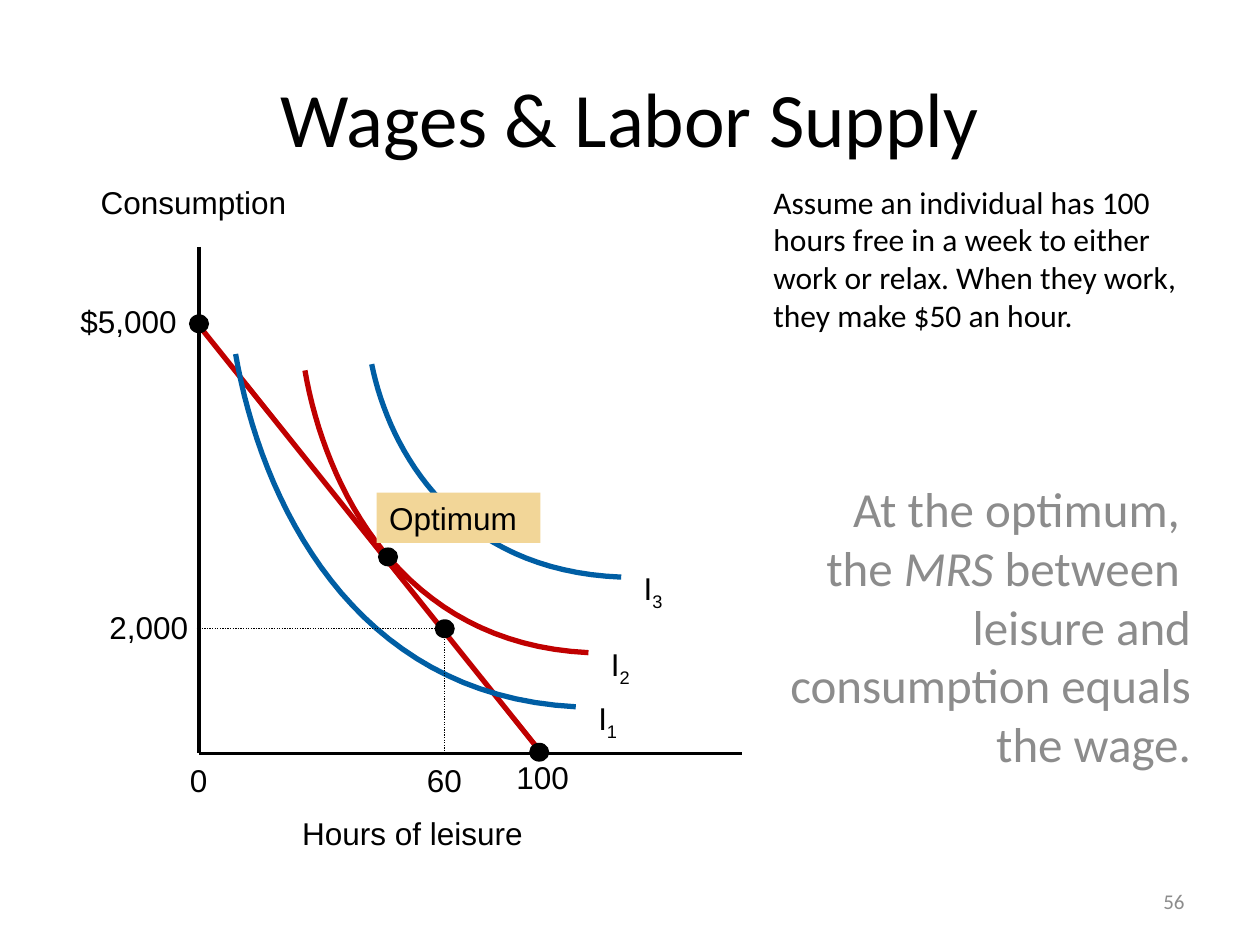
from lxml import etree
from pptx import Presentation
from pptx import util as u
from pptx.dml import color
from pptx.enum import dml, shapes, text
from pptx.oxml import ns

Inches, Pt = u.Inches, u.Pt
ALIGN, ANCHOR = text.PP_ALIGN, text.MSO_ANCHOR
COLORS = {
    "ink": "000000",
    "muted": "8C8C8C",
    "red": "C00000",
    "blue": "005EA4",
    "highlight": "F2D698",
}


def rgb(name):
    return color.RGBColor.from_string(COLORS[name])


def add_run(paragraph, wording, size, font, ink="ink", italic=False, subscript=False):
    run = paragraph.add_run()
    run.text = wording
    run.font.size = Pt(size)
    run.font.name = font
    run.font.italic = italic
    run.font.color.rgb = rgb(ink)
    if subscript:
        run.font._element.set("baseline", "-25000")


def add_textbox(slide, box, align=ALIGN.LEFT, anchor=ANCHOR.TOP, wrap=True):
    frame = slide.shapes.add_textbox(*map(Inches, box)).text_frame
    frame.word_wrap = wrap
    frame.vertical_anchor = anchor
    frame.paragraphs[0].alignment = align
    return frame.paragraphs[0]


def add_title(slide, box):
    title = add_textbox(slide, box, ALIGN.CENTER, ANCHOR.MIDDLE)
    add_run(title, "Wages & Labor Supply", 44, "Calibri")


def add_assumption(slide, box):
    assumption = add_textbox(slide, box)
    add_run(
        assumption,
        "Assume an individual has 100 hours free in a week to either "
        "work or relax. When they work, they make $50 an hour.",
        18,
        "Calibri",
    )


def add_conclusion(slide, box):
    conclusion = add_textbox(slide, box, ALIGN.RIGHT, ANCHOR.MIDDLE)
    add_run(conclusion, "At the optimum, ", 28, "Calibri", "muted")
    conclusion.add_line_break()
    add_run(conclusion, "the ", 28, "Calibri", "muted")
    add_run(conclusion, "MRS", 28, "Calibri", "muted", italic=True)
    add_run(conclusion, " between ", 28, "Calibri", "muted")
    conclusion.add_line_break()
    add_run(conclusion, "leisure and consumption equals the wage.", 28, "Calibri", "muted")


def add_page_number(slide, box):
    number = add_textbox(slide, box, ALIGN.RIGHT, ANCHOR.MIDDLE)
    add_run(number, "56", 12, "Calibri", "muted")


def add_line(slide, start, end, ink, width, dotted=False):
    line = slide.shapes.add_connector(
        shapes.MSO_CONNECTOR.STRAIGHT, *map(Inches, start + end)
    )
    line.line.color.rgb = rgb(ink)
    line.line.width = Pt(width)
    if dotted:
        line.line.dash_style = dml.MSO_LINE.ROUND_DOT
    etree.SubElement(line._element.spPr, ns.qn("a:effectLst"))


def bezier(controls, steps=32):
    weights = (1, 3, 3, 1)
    return [
        tuple(
            sum(
                w * (1 - t) ** (3 - k) * t**k * point[axis]
                for k, (w, point) in enumerate(zip(weights, controls))
            )
            for axis in (0, 1)
        )
        for t in (step / steps for step in range(steps + 1))
    ]


def add_curve(slide, controls, ink):
    points = [(Inches(x), Inches(y)) for x, y in bezier(controls)]
    builder = slide.shapes.build_freeform(*points[0])
    builder.add_line_segments(points[1:], close=False)
    curve = builder.convert_to_shape()
    curve.shadow.inherit = False
    curve.fill.background()
    curve.line.color.rgb = rgb(ink)
    curve.line.width = Pt(3)


def add_filled(slide, kind, box, fill):
    shape = slide.shapes.add_shape(kind, *map(Inches, box))
    shape.shadow.inherit = False
    shape.fill.solid()
    shape.fill.fore_color.rgb = rgb(fill)
    shape.line.fill.background()
    return shape


def add_graph(slide, box):
    left, top, width, height = box

    def at(x, y):
        return left + x, top + y

    add_line(slide, at(0, 0), at(0, height), "ink", 2.25)
    add_line(slide, at(0, height), at(width, height), "ink", 2.25)
    add_line(slide, at(-0.02, 0.6), at(2.72, height), "red", 3)

    indifference_curves = [
        ("2", "red", [(0.84, 0.98), (1, 1.9), (1.6, 3.15), (3.09, 3.22)]),
        ("1", "blue", [(0.29, 0.85), (0.49, 2), (1.21, 3.56), (2.99, 3.65)]),
        ("3", "blue", [(1.37, 0.93), (1.51, 1.62), (2.04, 2.57), (3.35, 2.62)]),
    ]
    for level, ink, controls in indifference_curves:
        add_curve(slide, [at(*point) for point in controls], ink)
        end_x, end_y = controls[-1]
        name = add_textbox(slide, (*at(end_x + 0.08, end_y - 0.11), 0.36, 0.4), wrap=False)
        add_run(name, "I", 18, "Arial")
        add_run(name, level, 18, "Arial", subscript=True)

    add_line(slide, at(1.95, 3.03), at(1.95, height), "ink", 0.75, dotted=True)
    add_line(slide, at(-0.02, 3.03), at(1.93, 3.03), "ink", 0.75, dotted=True)

    dot_width, dot_height = 0.16, 0.15
    for x, y in [(0, 0.61), (2.7, 4.01), (1.5, 2.46), (1.95, 3.03)]:
        corner = at(x - dot_width / 2, y - dot_height / 2)
        add_filled(slide, shapes.MSO_SHAPE.OVAL, (*corner, dot_width, dot_height), "ink")

    optimum = add_filled(
        slide, shapes.MSO_SHAPE.RECTANGLE, (*at(1.41, 1.95), 1.3, 0.4), "highlight"
    ).text_frame
    optimum.word_wrap = False
    optimum.vertical_anchor = ANCHOR.TOP
    optimum.paragraphs[0].alignment = ALIGN.LEFT
    add_run(optimum.paragraphs[0], "Optimum", 18, "Arial")

    labels = [
        ("Consumption", -0.9, -0.56, 1.69, ALIGN.RIGHT),
        ("Hours of leisure", 0.72, 4.45, 1.97, ALIGN.LEFT),
        ("0", -0.17, 4.03, 0.34, ALIGN.LEFT),
        ("60", 1.71, 4.03, 0.48, ALIGN.LEFT),
        ("100", 2.42, 4.01, 0.62, ALIGN.LEFT),
        ("$5,000", -1.04, 0.39, 1.03, ALIGN.LEFT),
        ("2,000", -0.81, 2.82, 0.83, ALIGN.LEFT),
    ]
    for wording, x, y, label_width, align in labels:
        label = add_textbox(slide, (*at(x, y), label_width, 0.4), align, wrap=False)
        add_run(label, wording, 18, "Arial")


def main():
    deck = Presentation()
    deck.slide_width, deck.slide_height = Inches(10), Inches(7.5)
    slide = deck.slides.add_slide(deck.slide_layouts[6])
    add_title(slide, (0.5, 0.3, 9, 1.25))
    add_conclusion(slide, (6.09, 3.48, 3.46, 2.97))
    add_graph(slide, (1.58, 1.96, 4.31, 4.02))
    add_page_number(slide, (7.17, 6.95, 2.33, 0.4))
    add_assumption(slide, (6.04, 1.4, 3.53, 1.31))
    deck.save("out.pptx")


if __name__ == "__main__":
    main()
